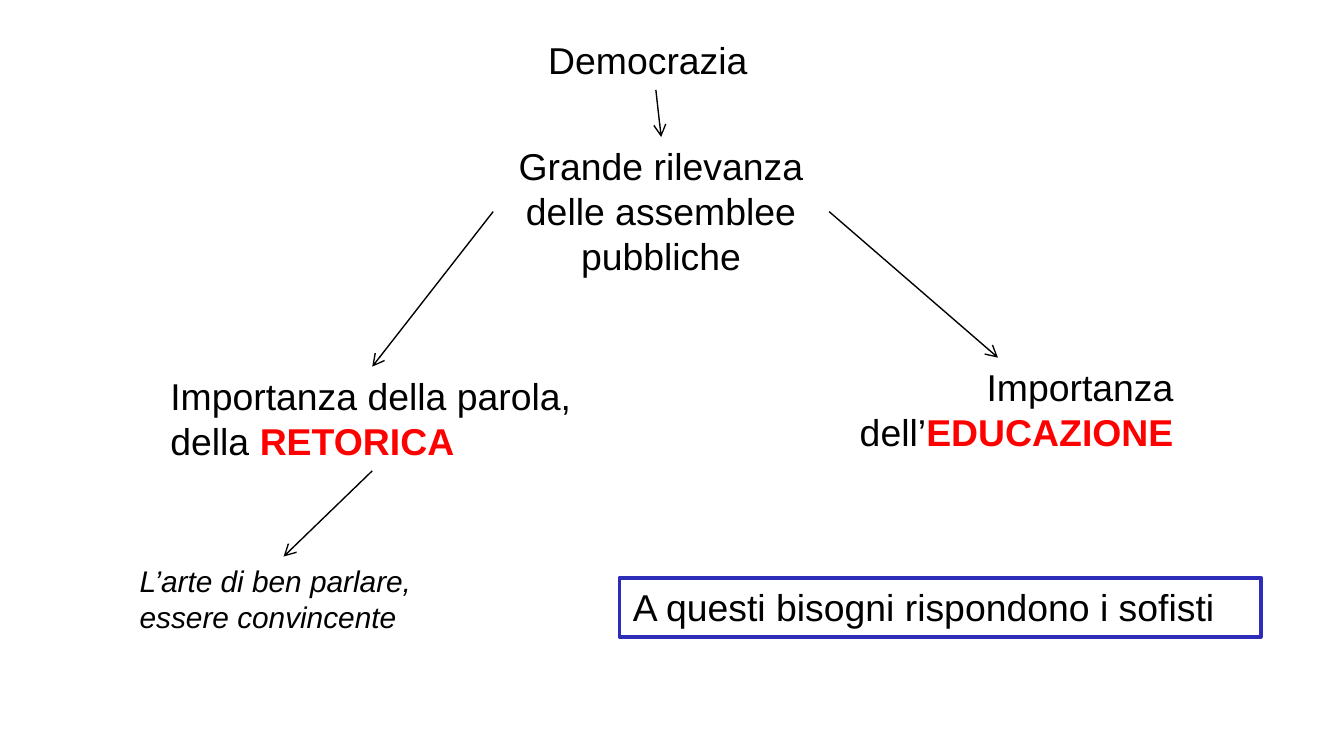
from dataclasses import dataclass

from lxml import etree
from pptx import Presentation
from pptx.dml.color import RGBColor
from pptx.enum.shapes import MSO_CONNECTOR, MSO_SHAPE
from pptx.enum.text import MSO_ANCHOR, MSO_AUTO_SIZE, PP_ALIGN
from pptx.oxml.ns import qn
from pptx.util import Cm, Pt

LEFT, CENTER, RIGHT = PP_ALIGN.LEFT, PP_ALIGN.CENTER, PP_ALIGN.RIGHT
ANCHOR_TOP = MSO_ANCHOR.TOP
FIT_SHAPE = MSO_AUTO_SIZE.SHAPE_TO_FIT_TEXT
STRAIGHT = MSO_CONNECTOR.STRAIGHT
RECTANGLE = MSO_SHAPE.RECTANGLE
TOP_SIDE, LEFT_SIDE, BOTTOM_SIDE, RIGHT_SIDE = range(4)
BLANK_LAYOUT = 6


@dataclass(frozen=True)
class Theme:
    font: str = "Arial"
    text: RGBColor = RGBColor(0, 0, 0)
    keyword: RGBColor = RGBColor(0xFF, 0, 0)
    paper: RGBColor = RGBColor(0xFF, 0xFF, 0xFF)
    frame: RGBColor = RGBColor(0x2D, 0x2D, 0xB9)
    body_size: Pt = Pt(20)
    note_size: Pt = Pt(16)
    arrow_width: Pt = Pt(0.75)
    frame_width: Pt = Pt(2)


class ConceptMap:
    def __init__(self, slide, theme):
        self.slide = slide
        self.theme = theme

    def add_run(self, paragraph, text, color, **formats):
        run = paragraph.add_run()
        run.text = text
        run.font.color.rgb = color
        values = {"name": self.theme.font, "size": self.theme.body_size, **formats}
        for attribute, value in values.items():
            setattr(run.font, attribute, value)

    def set_text(self, shape, text, keyword="", align=LEFT, **formats):
        frame = shape.text_frame
        settings = {"word_wrap": True, "vertical_anchor": ANCHOR_TOP,
                    "auto_size": FIT_SHAPE}
        for attribute, value in settings.items():
            setattr(frame, attribute, value)
        paragraph = frame.paragraphs[0]
        paragraph.alignment = align
        self.add_run(paragraph, text, self.theme.text, **formats)
        if keyword:
            self.add_run(paragraph, keyword, self.theme.keyword, bold=True, **formats)

    def concept(self, box, text, **options):
        shape = self.slide.shapes.add_textbox(*map(Cm, box))
        self.set_text(shape, text, **options)
        return shape

    def framed(self, box, text):
        shape = self.slide.shapes.add_shape(RECTANGLE, *map(Cm, box))
        shape.shadow.inherit = False
        shape.fill.solid()
        shape.fill.fore_color.rgb = self.theme.paper
        shape.line.color.rgb = self.theme.frame
        shape.line.width = self.theme.frame_width
        self.set_text(shape, text)

    def arrow(self, source, source_side, target):
        connector = self.slide.shapes.add_connector(STRAIGHT, 0, 0, 0, 0)
        connector.begin_connect(source, source_side)
        connector.end_connect(target, TOP_SIDE)
        connector.line.color.rgb = self.theme.text
        connector.line.width = self.theme.arrow_width
        properties = connector._element.spPr
        etree.SubElement(properties.find(qn("a:ln")), qn("a:tailEnd"), type="arrow")
        etree.SubElement(properties, qn("a:effectLst"))


def main():
    deck = Presentation()
    deck.slide_width, deck.slide_height = Cm(25.4), Cm(14.29)
    theme = Theme()
    slide = deck.slides.add_slide(deck.slide_layouts[BLANK_LAYOUT])
    concept_map = ConceptMap(slide, theme)

    # Concepts: left, top, width, height in cm
    assemblies = concept_map.concept(
        (9.32, 2.59, 6.35, 2.82), "Grande rilevanza delle assemblee pubbliche",
        align=CENTER)
    speaking_well = concept_map.concept(
        (2.39, 10.52, 5.94, 1.63), "L’arte di ben parlare, essere convincente",
        size=theme.note_size, italic=True)
    rhetoric = concept_map.concept(
        (2.97, 6.93, 8.13, 1.97), "Importanza della parola, della ",
        keyword="RETORICA")
    education = concept_map.concept(
        (15.29, 6.76, 7.14, 1.97), "Importanza dell’",
        keyword="EDUCAZIONE", align=RIGHT)
    democracy = concept_map.concept((10.11, 0.58, 4.57, 1.12), "Democrazia")

    # Arrows from cause to consequence
    for source, side, target in (
        (democracy, BOTTOM_SIDE, assemblies),
        (assemblies, LEFT_SIDE, rhetoric),
        (assemblies, RIGHT_SIDE, education),
        (rhetoric, BOTTOM_SIDE, speaking_well),
    ):
        concept_map.arrow(source, side, target)

    # Conclusion
    concept_map.framed((11.71, 10.92, 12.12, 1.12),
                       "A questi bisogni rispondono i sofisti")

    deck.save("out.pptx")


if __name__ == "__main__":
    main()
